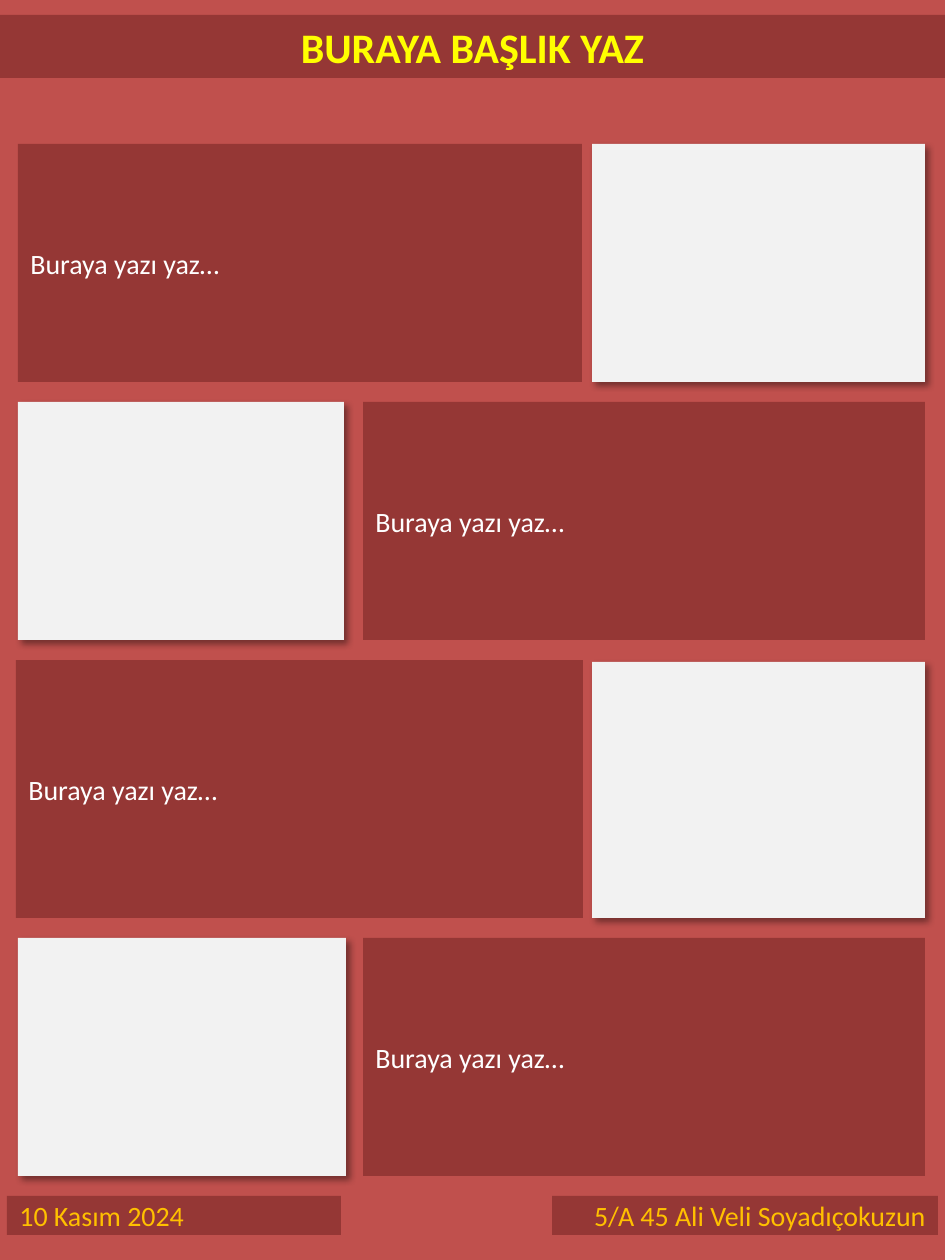
import pptx
import pptx.dml.color
import pptx.enum.shapes
import pptx.enum.text
import pptx.oxml
import pptx.oxml.ns
import pptx.util

RGBColor = pptx.dml.color.RGBColor
ALIGN = pptx.enum.text.PP_ALIGN
ANCHOR = pptx.enum.text.MSO_ANCHOR

BACKGROUND = RGBColor(0xC0, 0x50, 0x4D)
PANEL = RGBColor(0x95, 0x37, 0x35)
FRAME = RGBColor(0xF2, 0xF2, 0xF2)
WHITE = RGBColor(0xFF, 0xFF, 0xFF)
GOLD = RGBColor(0xFF, 0xC0, 0x00)
YELLOW = RGBColor(0xFF, 0xFF, 0x00)

SCALE = 914400 / 126  # EMU per px
SHADOW = (
    f'<a:effectLst {pptx.oxml.ns.nsdecls("a")}>'
    '<a:outerShdw blurRad="50800" dist="38100" dir="2700000" algn="tl" rotWithShape="0">'
    '<a:srgbClr val="000000"><a:alpha val="40000"/></a:srgbClr>'
    '</a:outerShdw></a:effectLst>'
)

deck = pptx.Presentation()
deck.slide_width = pptx.util.Emu(round(945 * SCALE))
deck.slide_height = pptx.util.Emu(round(1260 * SCALE))
page = deck.slides.add_slide(deck.slide_layouts[6])
page.background.fill.solid()
page.background.fill.fore_color.rgb = BACKGROUND


def add_block(place, color):
    """Add a plain rectangle at (left, top, width, height) in px."""
    lengths = [pptx.util.Emu(round(value * SCALE)) for value in place]
    block = page.shapes.add_shape(pptx.enum.shapes.MSO_SHAPE.RECTANGLE, *lengths)
    block.shadow.inherit = False
    block.fill.solid()
    block.fill.fore_color.rgb = color
    block.line.fill.background()
    return block


def add_label(place, text, color, align=ALIGN.LEFT, size=16, bold=False, anchor=ANCHOR.MIDDLE):
    """Add a dark panel with one line of text."""
    frame = add_block(place, PANEL).text_frame
    frame.word_wrap = True
    frame.vertical_anchor = anchor
    frame.text = text
    para = frame.paragraphs[0]
    para.alignment = align
    span = para.runs[0]
    span.font.name = "Calibri"
    span.font.size = pptx.util.Pt(size)
    span.font.bold = bold
    span.font.color.rgb = color
    return frame


# Text panels, alternating left and right
for place in [
    (18, 144, 564, 238),
    (363, 402, 562, 238),
    (16, 660, 567, 258),
    (363, 938, 562, 238),
]:
    add_label(place, "Buraya yazı yaz…", WHITE)

# Footer: date and student
add_label((7, 1196, 334, 39), "10 Kasım 2024", GOLD)
add_label((552, 1196, 386, 39), "5/A 45 Ali Veli Soyadıçokuzun", GOLD, ALIGN.RIGHT)

# Title band
title = add_label((0, 15, 945, 63), "BURAYA BAŞLIK YAZ", YELLOW, ALIGN.CENTER, 24, True, ANCHOR.TOP)
title.auto_size = pptx.enum.text.MSO_AUTO_SIZE.SHAPE_TO_FIT_TEXT

# Photo frames with a soft shadow, opposite the text panels
for place in [
    (592, 144, 333, 238),
    (18, 402, 326, 238),
    (592, 662, 333, 256),
    (18, 938, 328, 238),
]:
    properties = add_block(place, FRAME)._element.spPr
    properties.remove(properties.find(pptx.oxml.ns.qn("a:effectLst")))
    properties.append(pptx.oxml.parse_xml(SHADOW))

deck.save("out.pptx")
